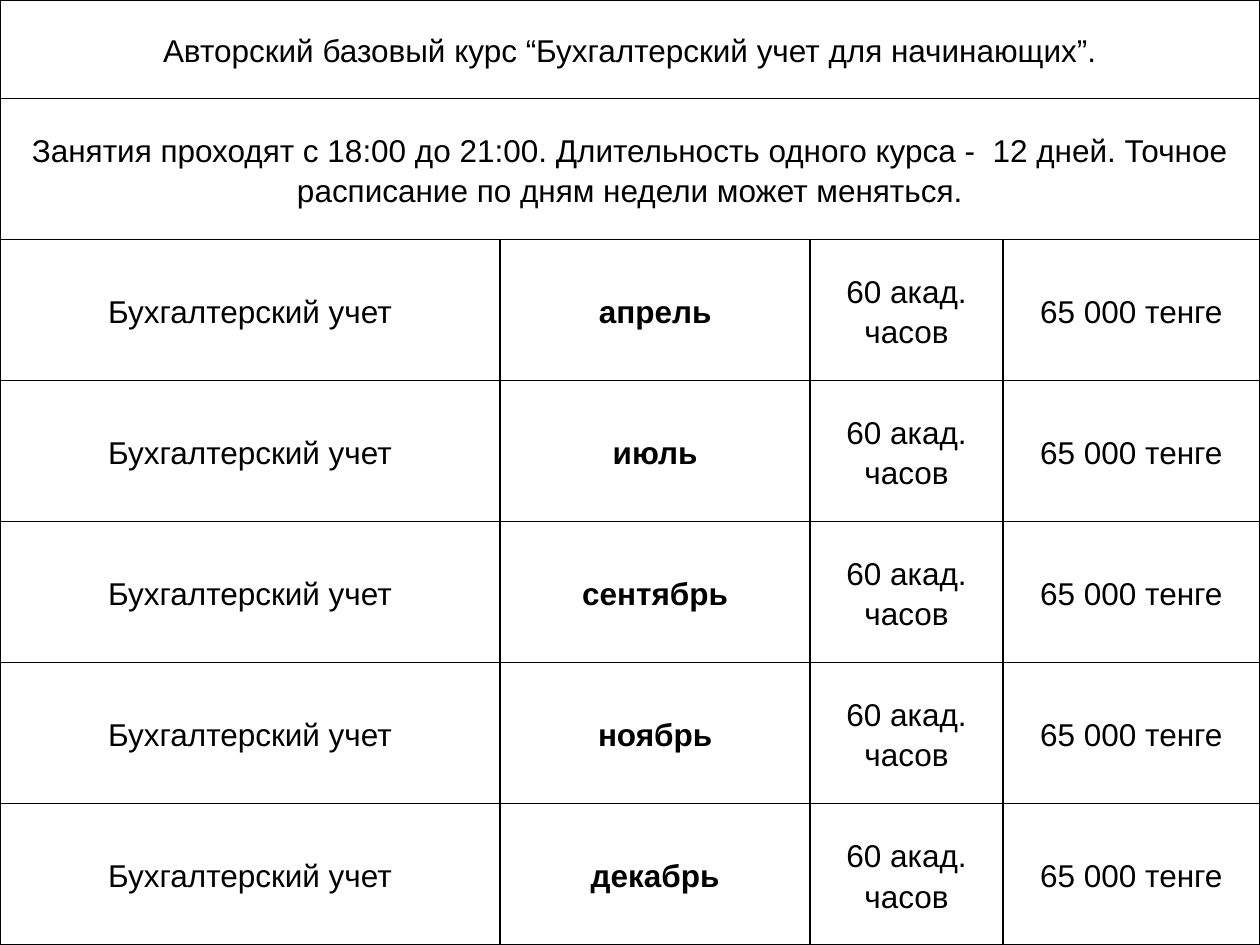
from dataclasses import dataclass

from lxml.etree import SubElement
from pptx import Presentation
from pptx.dml.color import RGBColor
from pptx.enum.text import MSO_ANCHOR, PP_ALIGN
from pptx.oxml.ns import qn
from pptx.table import Table, _Cell
from pptx.util import Inches, Pt


@dataclass(frozen=True)
class Theme:
    font: str = "Arial"
    size: int = 18
    line_spacing: float = 1.15
    text: str = "000000"
    fill: str = "FFFFFF"
    border: str = "000000"
    border_width: float = 1


@dataclass(frozen=True)
class Course:
    month: str
    name: str = "Бухгалтерский учет"
    duration: str = "60 акад. часов"
    price: str = "65 000 тенге"


THEME = Theme()
COLUMN_WIDTHS = (3.97, 2.46, 1.53, 2.04)
TITLE_HEIGHT = 0.78
ROW_HEIGHT = 1.12
HEADINGS = (
    "Авторский базовый курс “Бухгалтерский учет для начинающих”.",
    "Занятия проходят с 18:00 до 21:00. Длительность одного курса -  12 дней. "
    "Точное расписание по дням недели может меняться.",
)
COURSES = [Course(month) for month in ("апрель", "июль", "сентябрь", "ноябрь", "декабрь")]


def add_borders(cell: _Cell) -> None:
    properties = cell._tc.get_or_add_tcPr()
    for position, side in enumerate(("lnL", "lnR", "lnT", "lnB")):
        line = SubElement(properties, qn(f"a:{side}"), w=str(Pt(THEME.border_width)))
        fill = SubElement(line, qn("a:solidFill"))
        SubElement(fill, qn("a:srgbClr"), val=THEME.border)
        properties.insert(position, line)


def style_cell(cell: _Cell) -> None:
    cell.fill.solid()
    cell.fill.fore_color.rgb = RGBColor.from_string(THEME.fill)
    cell.vertical_anchor = MSO_ANCHOR.MIDDLE
    cell.margin_left = cell.margin_right = Inches(0.07)
    cell.margin_top = cell.margin_bottom = Inches(0)
    add_borders(cell)


def write_cell(cell: _Cell, text: str, bold: bool = False) -> None:
    paragraph = cell.text_frame.paragraphs[0]
    paragraph.alignment = PP_ALIGN.CENTER
    paragraph.line_spacing = THEME.line_spacing
    run = paragraph.add_run()
    run.text = text
    run.font.name = THEME.font
    run.font.size = Pt(THEME.size)
    run.font.bold = bold
    run.font.color.rgb = RGBColor.from_string(THEME.text)


def write_heading(table: Table, row: int, text: str) -> None:
    first = table.cell(row, 0)
    first.merge(table.cell(row, len(COLUMN_WIDTHS) - 1))
    write_cell(first, text)


def write_course(table: Table, row: int, course: Course) -> None:
    write_cell(table.cell(row, 0), course.name)
    write_cell(table.cell(row, 1), course.month, bold=True)
    write_cell(table.cell(row, 2), course.duration)
    write_cell(table.cell(row, 3), course.price)


def main() -> None:
    presentation = Presentation()
    presentation.slide_width = Inches(10)
    presentation.slide_height = Inches(7.5)
    slide = presentation.slides.add_slide(presentation.slide_layouts[6])

    row_count = len(HEADINGS) + len(COURSES)
    table = slide.shapes.add_table(
        row_count, len(COLUMN_WIDTHS), Inches(0), Inches(0), Inches(10), Inches(7.5)
    ).table
    table.first_row = table.horz_banding = False
    for column, width in zip(table.columns, COLUMN_WIDTHS):
        column.width = Inches(width)
    for index, row in enumerate(table.rows):
        row.height = Inches(ROW_HEIGHT if index else TITLE_HEIGHT)

    for cell in table.iter_cells():
        style_cell(cell)
    for row, heading in enumerate(HEADINGS):
        write_heading(table, row, heading)
    for row, course in enumerate(COURSES, start=len(HEADINGS)):
        write_course(table, row, course)

    presentation.save("out.pptx")


if __name__ == "__main__":
    main()
